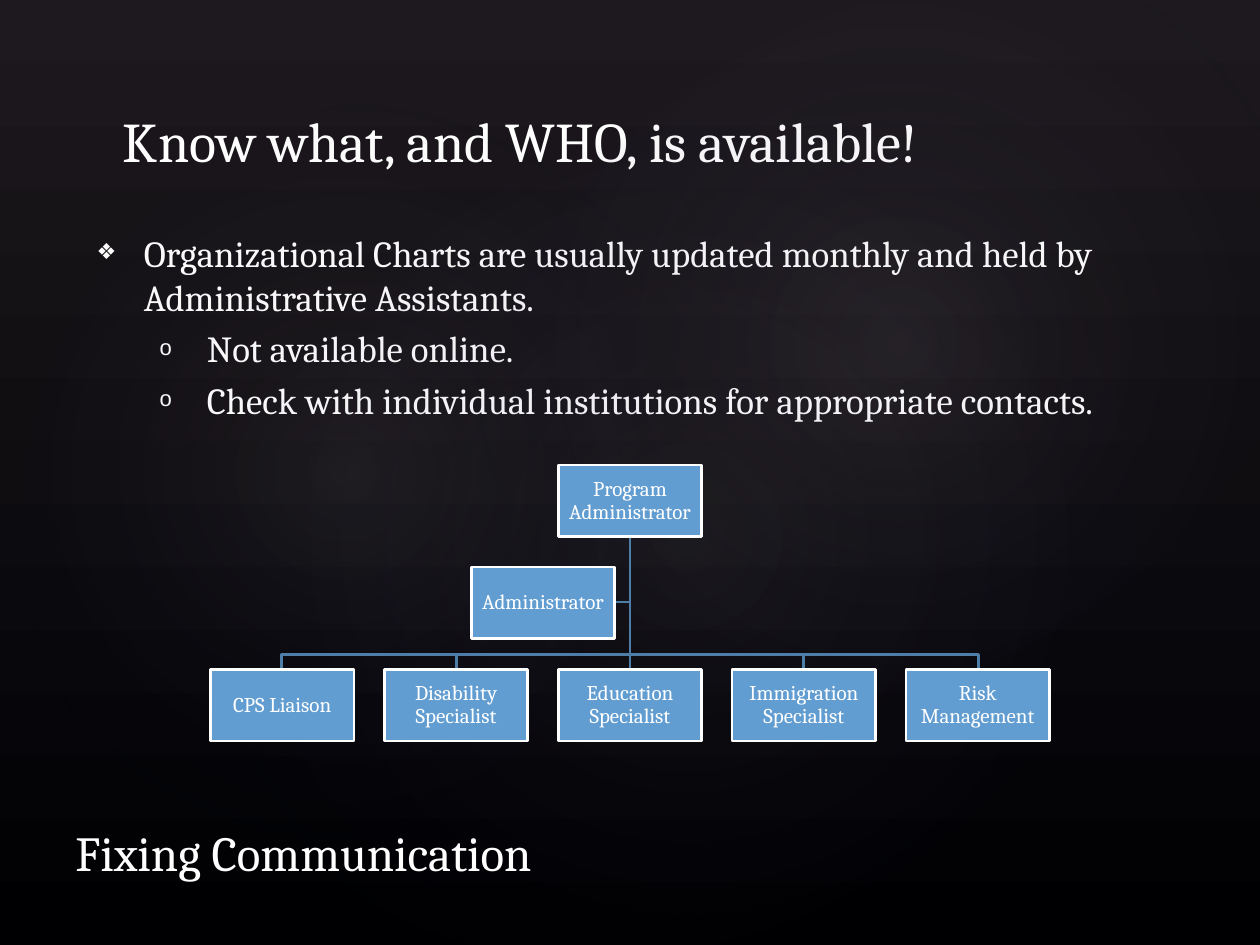
from lxml import etree
from pptx import Presentation
from pptx.dml.color import RGBColor
from pptx.enum.shapes import MSO_CONNECTOR as CONN, MSO_SHAPE as SHAPE
from pptx.enum.text import MSO_ANCHOR as ANCHOR, MSO_AUTO_SIZE as AUTO, PP_ALIGN as ALIGN
from pptx.oxml import parse_xml
from pptx.oxml.ns import nsdecls, qn
from pptx.util import Pt

FONT, WHITE, BLUE, LINE = "Cambria", "FFFFFF", "629DD1", "4E7EA7"
TITLE = "Know what, and WHO, is available!"
FOOTER = "Fixing Communication"
BULLETS = [
    (0, "Organizational Charts are usually updated monthly and held by Administrative Assistants."),
    (1, "Not available online."),
    (1, "Check with individual institutions for appropriate contacts."),
]
LEVELS = [("❖", 27), ("o", 63)]
HANGING = 27
ROOT, ASSISTANT = "Program Administrator", "Administrator"
TEAM = ["CPS Liaison", "Disability Specialist", "Education Specialist",
        "Immigration Specialist", "Risk Management"]
GLOWS = [
    (108, 82, 570, 449, 328.7, 7),
    (-21.6, 92, 436, 353, 294.3, 8),
    (257.8, 9.4, 510.5, 374.4, 328.7, 8),
]
BOX_W, BOX_H, PITCH, CENTER = 82, 41, 99.36, 360
ROOT_Y, ASSISTANT_Y, TEAM_Y, BUS_Y = 265.75, 324, 382.5, 373.75
ASSISTANT_X = CENTER - 8.7 - BOX_W


def rgb(value):
    return RGBColor.from_string(value)


def add_run(p, text, size):
    r = p.add_run()
    r.text = text
    r.font.name, r.font.size = FONT, Pt(size)
    r.font.color.rgb = rgb(WHITE)


def place(sp, x, y, w, h):
    sp.left, sp.top, sp.width, sp.height = Pt(x), Pt(y), Pt(w), Pt(h)


def set_frame(tf, anchor):
    tf.word_wrap, tf.auto_size, tf.vertical_anchor = True, AUTO.NONE, anchor


def add_heading(sp, text, size, *area):
    place(sp, *area)
    set_frame(sp.text_frame, ANCHOR.BOTTOM)
    p = sp.text_frame.paragraphs[0]
    p.alignment = ALIGN.LEFT
    add_run(p, text, size)


def add_glow(x, y, w, h, angle, alpha):
    sp = shapes.add_shape(SHAPE.OVAL, Pt(x), Pt(y), Pt(w), Pt(h))
    sp.rotation = angle
    sp.shadow.inherit = False
    sp.line.fill.background()
    stops = "".join(
        f'<a:gs pos="{pos}000"><a:srgbClr val="{color}"><a:alpha val="{a}000"/></a:srgbClr></a:gs>'
        for pos, color, a in [(0, "C4BCC6", alpha), (58, "242852", 0), (100, "242852", 0)])
    sp._element.spPr.find(qn("a:prstGeom")).addnext(parse_xml(
        f'<a:gradFill {nsdecls("a")} rotWithShape="1"><a:gsLst>{stops}</a:gsLst><a:path path="circle">'
        '<a:fillToRect l="50000" t="50000" r="50000" b="50000"/></a:path></a:gradFill>'))


def set_bullet(p, char, indent):
    pPr = p._p.get_or_add_pPr()
    pPr.set("marL", str(Pt(indent)))
    pPr.set("indent", str(-Pt(HANGING)))
    etree.SubElement(pPr, qn("a:buSzPct")).set("val", "60000")
    etree.SubElement(pPr, qn("a:buChar")).set("char", char)


def style_line(sp, color):
    sp.line.color.rgb, sp.line.width = rgb(color), Pt(1.5)


def add_route(*points):
    builder = shapes.build_freeform(*points[0], scale=Pt(1))
    builder.add_line_segments(points[1:], close=False)
    sp = builder.convert_to_shape()
    sp.shadow.inherit = False
    sp.fill.background()
    style_line(sp, LINE)


def add_box(text, x, y):
    sp = shapes.add_shape(SHAPE.RECTANGLE, Pt(x), Pt(y), Pt(BOX_W), Pt(BOX_H))
    sp.shadow.inherit = False
    sp.fill.solid()
    sp.fill.fore_color.rgb = rgb(BLUE)
    style_line(sp, WHITE)
    tf = sp.text_frame
    set_frame(tf, ANCHOR.MIDDLE)
    tf.margin_left = tf.margin_right = tf.margin_top = tf.margin_bottom = Pt(0.7)
    p = tf.paragraphs[0]
    p.alignment, p.line_spacing = ALIGN.CENTER, 0.9
    add_run(p, text, 12)
    return sp


prs = Presentation()
prs.slide_width, prs.slide_height = Pt(720), Pt(540)
slide = prs.slides.add_slide(prs.slide_layouts[1])
shapes = slide.shapes
title, body = slide.placeholders

fill = slide.background.fill
fill.gradient()
fill.gradient_angle = 270
for stop, color, pos in zip(fill.gradient_stops, ["1D191E", "000003"], [0, 1]):
    stop.color.rgb, stop.position = rgb(color), pos
for glow in GLOWS:
    add_glow(*glow)

add_heading(title, TITLE, 32, 63, 31, 594, 72)
add_heading(shapes.add_textbox(0, 0, 0, 0), FOOTER, 28, 36, 465, 594, 42)

place(body, 48, 128, 636, 125)
tf = body.text_frame
set_frame(tf, ANCHOR.TOP)
for i, (level, text) in enumerate(BULLETS):
    p = tf.add_paragraph() if i else tf.paragraphs[0]
    p.level, p.space_before = level, Pt(4.2 if i else 0)
    set_bullet(p, *LEVELS[level])
    add_run(p, text, 21)

root_bottom = (CENTER, ROOT_Y + BOX_H)
add_route(root_bottom, (CENTER, ASSISTANT_Y + BOX_H / 2),
          (ASSISTANT_X + BOX_W, ASSISTANT_Y + BOX_H / 2))
middle = len(TEAM) // 2
centers = [CENTER + (i - middle) * PITCH for i in range(len(TEAM))]
for x in centers:
    if x != CENTER:
        add_route(root_bottom, (CENTER, BUS_Y), (x, BUS_Y), (x, TEAM_Y))
trunk = shapes.add_connector(CONN.STRAIGHT, 0, 0, 0, 0)
style_line(trunk, LINE)
etree.SubElement(trunk._element.spPr, qn("a:effectLst"))

root = add_box(ROOT, CENTER - BOX_W / 2, ROOT_Y)
team = [add_box(text, x - BOX_W / 2, TEAM_Y) for text, x in zip(TEAM, centers)]
add_box(ASSISTANT, ASSISTANT_X, ASSISTANT_Y)
trunk.begin_connect(root, 2)
trunk.end_connect(team[middle], 0)

prs.save("out.pptx")
